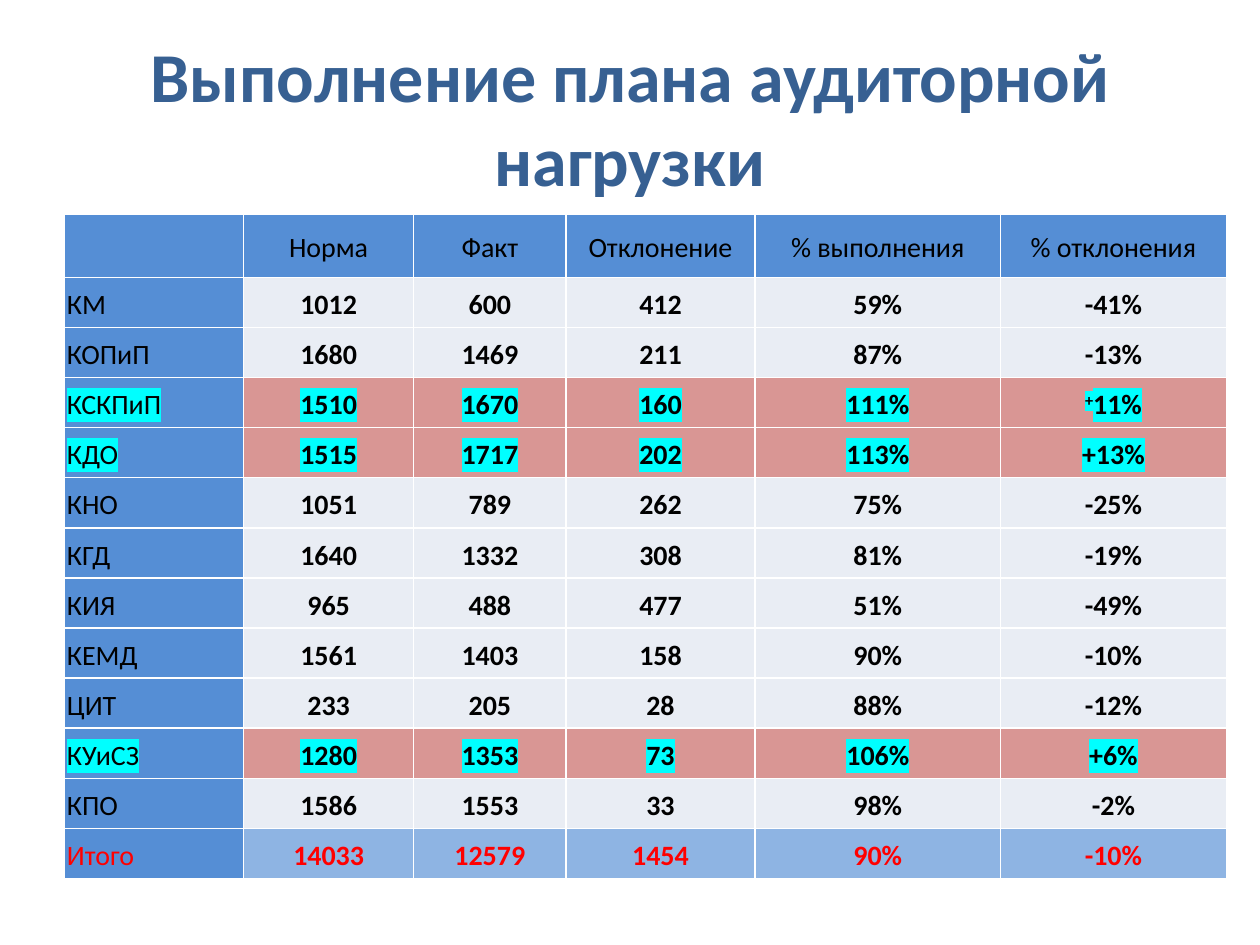
from dataclasses import dataclass

from pptx import Presentation
from pptx.dml.color import RGBColor as RGB
from pptx.enum.text import MSO_ANCHOR as Anchor, PP_ALIGN as Align
from pptx.oxml import parse_xml
from pptx.oxml.ns import nsdecls, qn
from pptx.util import Cm, Pt


@dataclass(frozen=True)
class Theme:
    font: str = "Calibri"
    title_size: int = 40
    table_size: int = 16
    title: str = "376092"
    text: str = "000000"
    total_text: str = "FF0000"
    header: str = "558ED5"
    body: str = "E9EDF4"
    over_plan: str = "D99694"
    total: str = "8EB4E3"
    highlight: str = "00FFFF"
    border: str = "FFFFFF"


class Deck:
    def __init__(self, prs, theme):
        self.theme = theme
        self.s = prs.slides.add_slide(prs.slide_layouts[6])

    def run(self, p, text, size, color, bold=False, highlight=None, raised=False):
        r = p.add_run()
        r.text = text
        r.font.name, r.font.size, r.font.bold = self.theme.font, Pt(size), bold
        r.font.color.rgb = RGB.from_string(color)
        rPr = r._r.get_or_add_rPr()
        if highlight:
            rPr.find(qn("a:solidFill")).addnext(parse_xml(
                f'<a:highlight {nsdecls("a")}><a:srgbClr val="{highlight}"/></a:highlight>'))
        if raised:
            rPr.set("baseline", "30000")

    def title(self, text, left, top, width, height):
        sp = self.s.shapes.add_textbox(Cm(left), Cm(top), Cm(width), Cm(height))
        tf = sp.text_frame
        tf.word_wrap = True
        tf.vertical_anchor = Anchor.MIDDLE
        p = tf.paragraphs[0]
        p.alignment = Align.CENTER
        self.run(p, text, self.theme.title_size, self.theme.title, bold=True)

    def borders(self, cell):
        tcPr = cell._tc.get_or_add_tcPr()
        for i, side in enumerate("LRTB"):
            tcPr.insert(i, parse_xml(
                f'<a:ln{side} {nsdecls("a")} w="{Pt(1)}"><a:solidFill>'
                f'<a:srgbClr val="{self.theme.border}"/></a:solidFill></a:ln{side}>'))

    def cell(self, cell, runs, fill, align, **style):
        cell.fill.solid()
        cell.fill.fore_color.rgb = RGB.from_string(fill)
        self.borders(cell)
        cell.vertical_anchor = Anchor.MIDDLE
        cell.margin_left = cell.margin_right = Cm(0.05)
        cell.margin_top = cell.margin_bottom = 0
        p = cell.text_frame.paragraphs[0]
        p.alignment, p.line_spacing = align, 1.15
        for text, raised in runs:
            self.run(p, text, self.theme.table_size, raised=raised, **style)

    def table(self, rows, left, top, widths, heights):
        t = self.theme
        table = self.s.shapes.add_table(
            len(rows), len(widths), Cm(left), Cm(top),
            Cm(sum(widths)), Cm(sum(heights))).table
        for col, width in zip(table.columns, widths):
            col.width = Cm(width)
        for row, height in zip(table.rows, heights):
            row.height = Cm(height)
        for i, values in enumerate(rows):
            over = values[0] in OVER_PLAN
            total = values[0] == "Итого"
            row_fill = t.total if total else t.over_plan if over else t.body
            for j, value in enumerate(values):
                heading = i == 0 or j == 0
                runs = value if isinstance(value, list) else [(value, False)] if value else []
                self.cell(table.cell(i, j), runs,
                          fill=t.header if heading else row_fill,
                          align=Align.LEFT if j == 0 else Align.CENTER,
                          color=t.total_text if total else t.text,
                          bold=not heading,
                          highlight=t.highlight if over else None)


OVER_PLAN = {"КСКПиП", "КДО", "КУиСЗ"}
ROWS = [
    ["", "Норма", "Факт", "Отклонение", "% выполнения", "% отклонения"],
    ["КМ", "1012", "600", "412", "59%", "-41%"],
    ["КОПиП", "1680", "1469", "211", "87%", "-13%"],
    ["КСКПиП", "1510", "1670", "160", "111%", [("+", True), ("11%", False)]],
    ["КДО", "1515", "1717", "202", "113%", "+13%"],
    ["КНО", "1051", "789", "262", "75%", "-25%"],
    ["КГД", "1640", "1332", "308", "81%", "-19%"],
    ["КИЯ", "965", "488", "477", "51%", "-49%"],
    ["КЕМД", "1561", "1403", "158", "90%", "-10%"],
    ["ЦИТ", "233", "205", "28", "88%", "-12%"],
    ["КУиСЗ", "1280", "1353", "73", "106%", "+6%"],
    ["КПО", "1586", "1553", "33", "98%", "-2%"],
    ["Итого", "14033", "12579", "1454", "90%", "-10%"],
]


def main():
    prs = Presentation()
    prs.slide_width, prs.slide_height = Cm(25.4), Cm(19.05)
    deck = Deck(prs, Theme())

    # Heading
    deck.title("Выполнение плана аудиторной нагрузки", 1.27, 0.76, 22.86, 3.18)

    # Teaching load by department
    deck.table(ROWS, 1.3, 4.32,
               widths=[3.61, 3.43, 3.07, 3.81, 4.95, 4.55],
               heights=[1.27] + [1.01] * (len(ROWS) - 1))

    prs.save("out.pptx")


if __name__ == "__main__":
    main()
